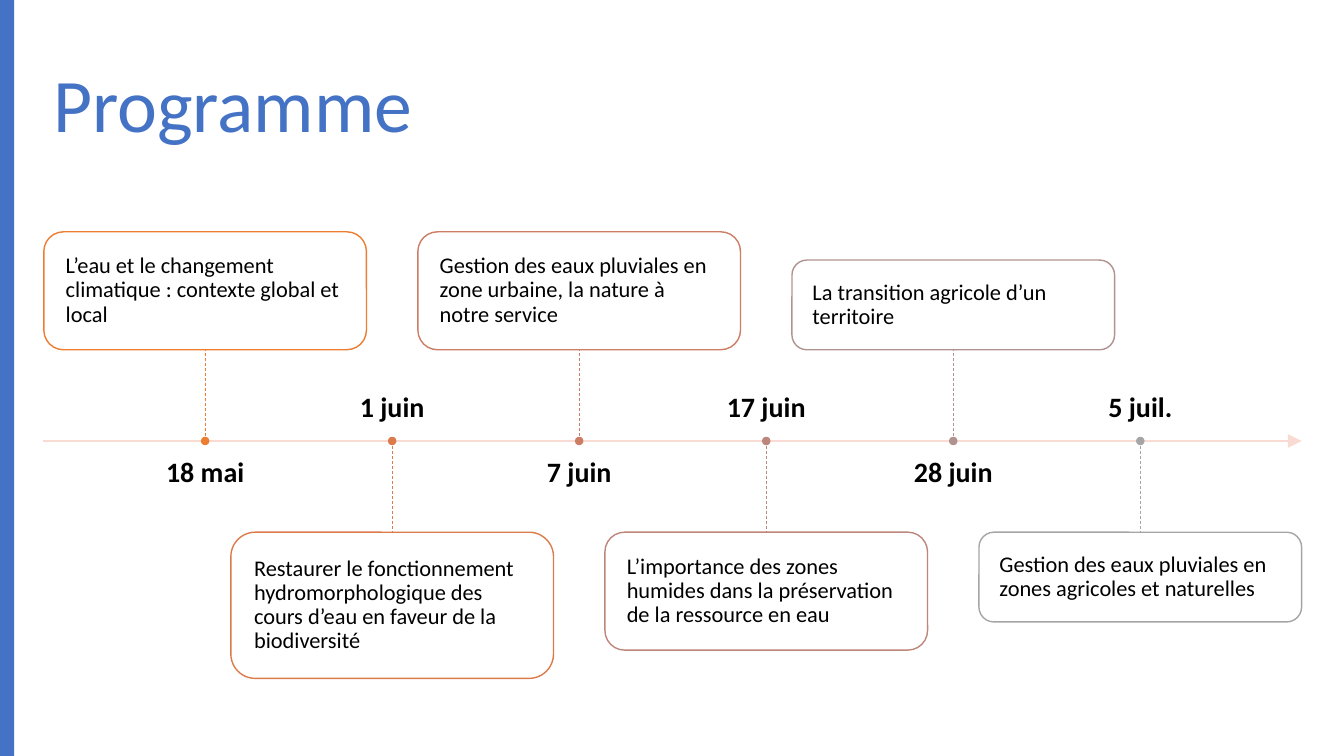
from lxml import etree
from pptx import Presentation
from pptx.dml.color import RGBColor
from pptx.enum import dml, shapes, text
from pptx.oxml.ns import qn
from pptx.util import Inches, Pt

TITLE = "Programme"
SESSIONS = [
    ("18 mai", "L’eau et le changement climatique : contexte global et local",
     1.17, RGBColor(0xED, 0x7D, 0x31)),
    ("1 juin", "Restaurer le fonctionnement hydromorphologique des cours d’eau "
     "en faveur de la biodiversité", 1.45, RGBColor(0xDC, 0x7A, 0x4B)),
    ("7 juin", "Gestion des eaux pluviales en zone urbaine, la nature à notre service",
     1.17, RGBColor(0xCC, 0x7D, 0x64)),
    ("17 juin", "L’importance des zones humides dans la préservation de la ressource en eau",
     1.17, RGBColor(0xBD, 0x86, 0x7B)),
    ("28 juin", "La transition agricole d’un territoire",
     0.89, RGBColor(0xB0, 0x93, 0x91)),
    ("5 juil.", "Gestion des eaux pluviales en zones agricoles et naturelles",
     0.89, RGBColor(0xA5, 0xA5, 0xA5)),
]
BLUE = RGBColor(0x44, 0x72, 0xC4)
AXIS_PINK = RGBColor(0xF9, 0xDB, 0xD3)
BLACK = RGBColor(0, 0, 0)
WHITE = RGBColor(255, 255, 255)

AXIS_LEFT, AXIS_RIGHT, AXIS_Y = 0.43, 12.91, 4.375
FIRST_X, STEP = 2.035, 1.855
STEM = 0.905
TOPIC_WIDTH, TOPIC_INSET = 3.2, 0.16
DATE_WIDTH, DATE_HEIGHT, DATE_GAP = 2.81, 0.54, 0.175
DOT = 0.07

deck = Presentation()
deck.slide_width, deck.slide_height = Inches(13.33), Inches(7.5)
slide = deck.slides.add_slide(deck.slide_layouts[6])


def write(holder, words, size, color, inset, anchor, align, bold=False):
    frame = holder.text_frame
    frame.text = words
    frame.word_wrap = True
    frame.vertical_anchor = anchor
    frame.margin_left = frame.margin_right = Inches(inset[0])
    frame.margin_top = frame.margin_bottom = Inches(inset[1])
    paragraph = frame.paragraphs[0]
    paragraph.alignment = align
    paragraph.line_spacing = 0.9
    font = paragraph.runs[0].font
    font.name, font.size, font.bold = "Calibri", Pt(size), bold
    font.color.rgb = color


def add_box(kind, left, top, width, height, fill, outline=None):
    box = slide.shapes.add_shape(
        kind, Inches(left), Inches(top), Inches(width), Inches(height))
    box.shadow.inherit = False
    box.fill.solid()
    box.fill.fore_color.rgb = fill
    if outline is None:
        box.line.fill.background()
    else:
        box.line.color.rgb = outline
        box.line.width = Pt(1)
    return box


def add_label(left, top, width, height):
    return slide.shapes.add_textbox(
        Inches(left), Inches(top), Inches(width), Inches(height))


def add_line(x1, y1, x2, y2, color, width):
    line = slide.shapes.add_connector(
        shapes.MSO_CONNECTOR.STRAIGHT, Inches(x1), Inches(y1), Inches(x2), Inches(y2))
    line.line.color.rgb = color
    line.line.width = Pt(width)
    etree.SubElement(line._element.spPr, qn("a:effectLst"))
    return line


write(add_label(0.43, 0.35, 12.48, 1.45), TITLE, 54, BLUE, (0.1, 0.05),
      text.MSO_ANCHOR.MIDDLE, text.PP_ALIGN.LEFT)
add_box(shapes.MSO_SHAPE.RECTANGLE, 0, 0, 0.14, 7.5, BLUE)

axis = add_line(AXIS_LEFT, AXIS_Y, AXIS_RIGHT, AXIS_Y, AXIS_PINK, 1)
etree.SubElement(axis.line._get_or_add_ln(), qn("a:tailEnd"), type="triangle",
                 w="lg", len="lg")

for index, (date, topic, height, color) in enumerate(SESSIONS):
    x = FIRST_X + index * STEP
    above = index % 2 == 0
    stem_end = AXIS_Y - STEM if above else AXIS_Y + STEM
    topic_top = stem_end - height if above else stem_end
    date_top = AXIS_Y + DATE_GAP if above else AXIS_Y - DATE_GAP - DATE_HEIGHT

    write(add_label(x - DATE_WIDTH / 2, date_top, DATE_WIDTH, DATE_HEIGHT),
          date, 20, BLACK, (0, 0),
          text.MSO_ANCHOR.TOP if above else text.MSO_ANCHOR.BOTTOM,
          text.PP_ALIGN.CENTER, bold=True)
    topic_box = add_box(shapes.MSO_SHAPE.ROUNDED_RECTANGLE, x - TOPIC_WIDTH / 2,
                        topic_top, TOPIC_WIDTH, height, WHITE, color)
    write(topic_box, topic, 16, BLACK, (TOPIC_INSET, TOPIC_INSET),
          text.MSO_ANCHOR.MIDDLE, text.PP_ALIGN.LEFT)
    stem = add_line(x, AXIS_Y, x, stem_end, color, 0.5)
    stem.line.dash_style = dml.MSO_LINE.DASH
    add_box(shapes.MSO_SHAPE.OVAL, x - DOT / 2, AXIS_Y - DOT / 2, DOT, DOT, color, color)

deck.save("out.pptx")
